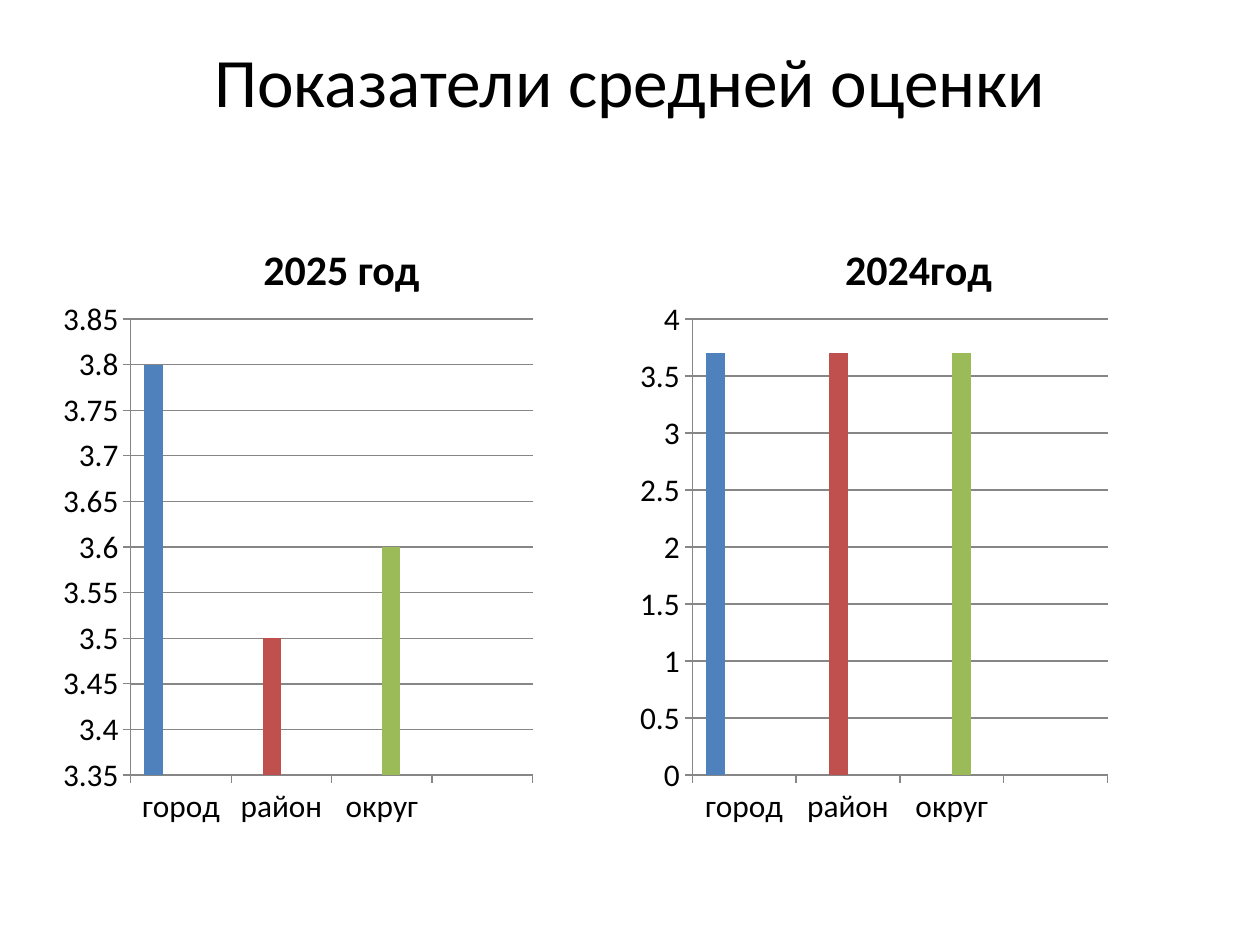
"""Build a slide comparing average marks for two years."""
from pptx import Presentation
from pptx import util as u
from pptx.chart.data import CategoryChartData
from pptx.dml.color import RGBColor
from pptx.enum import chart as charts, text

BLACK = RGBColor(0x00, 0x00, 0x00)
WHITE = RGBColor(0xFF, 0xFF, 0xFF)
GREY = RGBColor(0x86, 0x86, 0x86)
SERIES_COLORS = (
    RGBColor(0x4F, 0x81, 0xBD),
    RGBColor(0xC0, 0x50, 0x4D),
    RGBColor(0x9B, 0xBB, 0x59),
    RGBColor(0x80, 0x64, 0xA2),
)
CATEGORIES = ("город", "район", "округ", "")
COLUMN_WIDTH = 318.24
YEARS = (
    dict(heading="2025 год", left=36, marks=(3.8, 3.5, 3.6),
         scale=(3.35, 3.85, 0.05), plot=(0.115, 0.033, 0.727, 0.84)),
    dict(heading="2024год", left=365.76, marks=(3.7, 3.7, 3.7),
         scale=(0, 4, 0.5), plot=(0.09, 0.033, 0.749, 0.84)),
)


def apply(target, **values):
    for name, value in values.items():
        setattr(target, name, value)


class SlideBuilder:
    def __init__(self, presentation):
        self.font_name = "Calibri"
        self.slide = presentation.slides.add_slide(presentation.slide_layouts[5])
        self.slide.background.fill.solid()
        self.slide.background.fill.fore_color.rgb = WHITE

    def style_font(self, font, size, bold=False):
        apply(font, name=self.font_name, size=u.Pt(size), bold=bold)
        font.color.rgb = BLACK

    def fill_text(self, shape, content, size, bold, **frame_format):
        frame = shape.text_frame
        apply(frame, word_wrap=True, auto_size=text.MSO_AUTO_SIZE.NONE, **frame_format)
        paragraph = frame.paragraphs[0]
        paragraph.alignment = text.PP_ALIGN.CENTER
        run = paragraph.add_run()
        run.text = content
        self.style_font(run.font, size, bold)

    def title(self, content):
        shape = self.slide.shapes.title
        apply(shape, left=u.Pt(36), top=u.Pt(21.6), width=u.Pt(648), height=u.Pt(90))
        self.fill_text(shape, content, 39.6, False,
                       vertical_anchor=text.MSO_ANCHOR.TOP, margin_top=0)

    def heading(self, content, left):
        shape = self.slide.shapes.add_textbox(
            u.Pt(left), u.Pt(121), u.Pt(COLUMN_WIDTH), u.Pt(50.4))
        self.fill_text(shape, content, 24, True, vertical_anchor=text.MSO_ANCHOR.BOTTOM)

    def column_chart(self, marks, left, scale, plot):
        data = CategoryChartData(number_format="General")
        data.categories = CATEGORIES
        for index in range(len(CATEGORIES)):
            values = [mark if place == index else None for place, mark in enumerate(marks)]
            data.add_series(f"Series {index + 1}", values + [None])
        chart = self.slide.shapes.add_chart(
            charts.XL_CHART_TYPE.COLUMN_CLUSTERED, u.Pt(left), u.Pt(171.4),
            u.Pt(COLUMN_WIDTH), u.Pt(311), data).chart
        apply(chart, has_legend=False, has_title=False)
        self.style_font(chart.font, 18)

        bars = chart.plots[0]
        apply(bars, gap_width=150, overlap=0, vary_by_categories=False)
        for series, color in zip(bars.series, SERIES_COLORS):
            series.invert_if_negative = False
            series.format.fill.solid()
            series.format.fill.fore_color.rgb = color

        value_axis = chart.value_axis
        minimum, maximum, step = scale
        apply(value_axis, minimum_scale=minimum, maximum_scale=maximum,
              major_unit=step, has_major_gridlines=True)
        apply(value_axis.tick_labels, number_format="General",
              number_format_is_linked=False)
        for axis in (chart.category_axis, value_axis):
            axis.major_tick_mark = charts.XL_TICK_MARK.OUTSIDE
        for part in (chart.category_axis, value_axis, value_axis.major_gridlines):
            part.format.line.width = u.Pt(0.75)
            part.format.line.color.rgb = GREY
        self.place_plot(chart, plot)

    def place_plot(self, chart, plot):
        area = chart.element.chart.plotArea if hasattr(chart, "element") \
            else chart.plots[0]._element.getparent()
        layout = area.find("{*}layout")
        if layout is None:
            layout = area.makeelement(area.tag.replace("plotArea", "layout"))
            area.insert(0, layout)
        manual = self.add_child(layout, "manualLayout")
        settings = dict(layoutTarget="inner", xMode="edge", yMode="edge")
        settings.update(zip("xywh", plot))
        for name, value in settings.items():
            self.add_child(manual, name).set("val", str(value))

    def add_child(self, parent, name):
        namespace = parent.tag.split("}")[0]
        child = parent.makeelement(namespace + "}" + name)
        parent.append(child)
        return child


def main():
    presentation = Presentation()
    apply(presentation, slide_width=u.Pt(720), slide_height=u.Pt(540))
    builder = SlideBuilder(presentation)
    builder.title("Показатели средней оценки")
    for year in YEARS:
        builder.heading(year["heading"], year["left"])
        builder.column_chart(year["marks"], year["left"], year["scale"], year["plot"])
    presentation.save("out.pptx")


if __name__ == "__main__":
    main()
